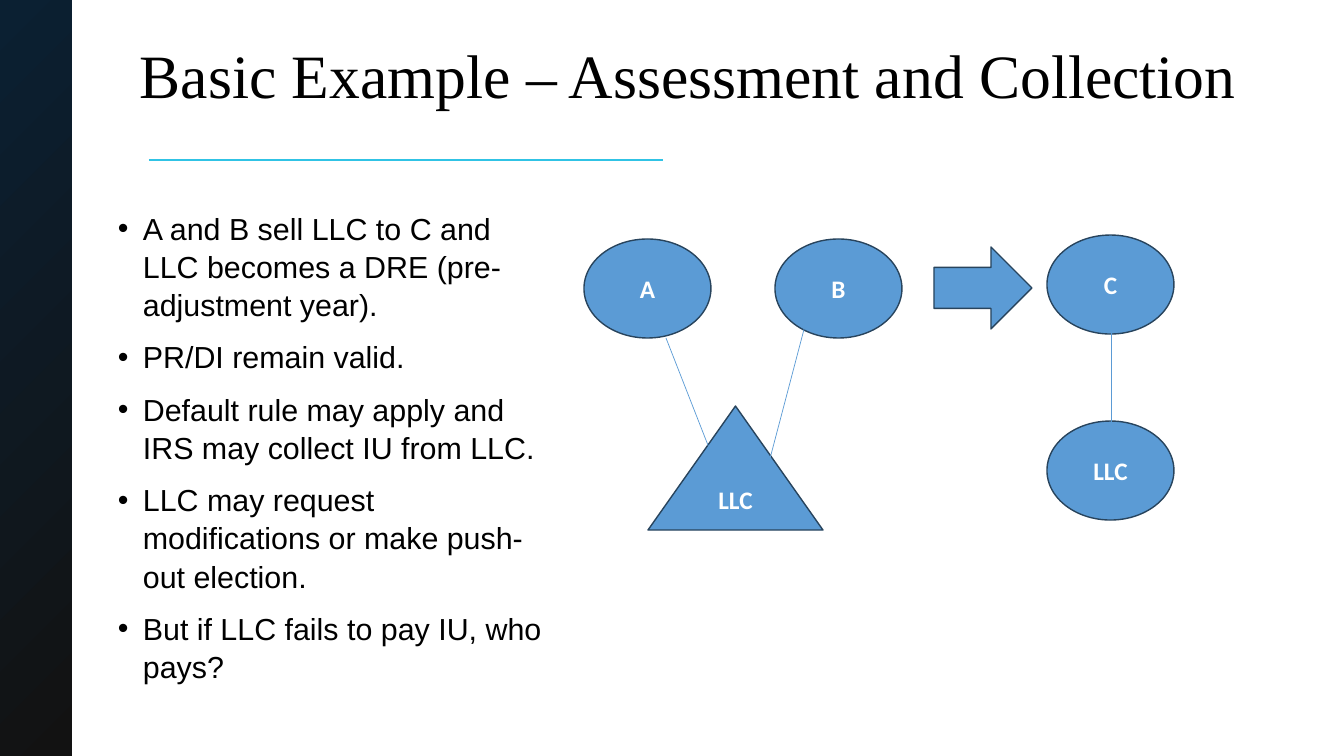
from lxml.etree import SubElement
from pptx import Presentation
from pptx.dml.color import RGBColor
from pptx.enum.shapes import MSO_CONNECTOR, MSO_SHAPE
from pptx.enum.text import MSO_ANCHOR, PP_ALIGN
from pptx.oxml.ns import qn
from pptx.util import Pt

EMU_PER_PX = 914400 / 100.8
BLUE, OUTLINE, RULE = "5B9BD5", "28445D", "30C3E5"
BLACK, WHITE = "000000", "FFFFFF"
OVAL_SIZE = (127, 99)
POINTS = [
    "A and B sell LLC to C and LLC becomes a DRE (pre-adjustment year).",
    "PR/DI remain valid.",
    "Default rule may apply and IRS may collect IU from LLC.",
    "LLC may request modifications or make push-out election.",
    "But if LLC fails to pay IU, who pays?",
]


def px(*lengths):
    return [round(length * EMU_PER_PX) for length in lengths]


def color(hex_string):
    return RGBColor.from_string(hex_string)


def set_font(para, name, size, hex_string, bold=False):
    font = para.font
    font.name, font.size, font.bold = name, Pt(size), bold
    font.color.rgb = color(hex_string)


def add_bullet(para, indent):
    """Give the paragraph a round bullet with a hanging indent in px."""
    properties = para._p.get_or_add_pPr()
    hang = px(indent)[0]
    properties.set("marL", str(hang))
    properties.set("indent", str(-hang))
    SubElement(properties, qn("a:buFont"), typeface="Arial")
    SubElement(properties, qn("a:buChar"), char="•")


class SlideBuilder:
    def __init__(self, slide):
        self.shapes = slide.shapes

    def sidebar(self, frame, start, end):
        bar = self.shapes.add_shape(MSO_SHAPE.RECTANGLE, *px(*frame))
        bar.shadow.inherit = False
        bar.line.fill.background()
        bar.fill.gradient()
        bar.fill.gradient_angle = 315
        for stop, hex_string in zip(bar.fill.gradient_stops, (start, end)):
            stop.color.rgb = color(hex_string)

    def line(self, start, end, hex_string=BLUE, width=0.5):
        connector = self.shapes.add_connector(
            MSO_CONNECTOR.STRAIGHT, *px(*start, *end))
        connector.line.color.rgb = color(hex_string)
        connector.line.width = Pt(width)
        SubElement(connector._element.spPr, qn("a:effectLst"))

    def text_frame(self, frame):
        text = self.shapes.add_textbox(*px(*frame)).text_frame
        text.word_wrap = True
        return text

    def title(self, frame, wording):
        para = self.text_frame(frame).paragraphs[0]
        para.text = wording
        para.line_spacing = 0.9
        set_font(para, "Times New Roman", 44, BLACK)

    def bullets(self, frame, wordings):
        text = self.text_frame(frame)
        for index, wording in enumerate(wordings):
            para = text.add_paragraph() if index else text.paragraphs[0]
            para.text = wording
            para.line_spacing = 1.05
            para.space_before = Pt(10 if index else 0)
            add_bullet(para, 25)
            set_font(para, "Arial", 21.7, BLACK)

    def node(self, preset, frame, label=""):
        shape = self.shapes.add_shape(preset, *px(*frame))
        shape.shadow.inherit = False
        shape.fill.solid()
        shape.fill.fore_color.rgb = color(BLUE)
        shape.line.color.rgb = color(OUTLINE)
        shape.line.width = Pt(1)
        if label:
            shape.text_frame.vertical_anchor = MSO_ANCHOR.MIDDLE
            para = shape.text_frame.paragraphs[0]
            para.text = label
            para.alignment = PP_ALIGN.CENTER
            set_font(para, "Calibri", 18, WHITE, bold=True)


def main():
    deck = Presentation()
    deck.slide_width, deck.slide_height = px(1344, 756)
    page = SlideBuilder(deck.slides.add_slide(deck.slide_layouts[6]))

    page.sidebar((0, 0, 72, 756), "0B2032", "121212")
    page.line((149, 160), (663, 160), RULE, 1.5)
    page.title((130, 40, 1159, 146), "Basic Example – Assessment and Collection")
    page.bullets((108, 203, 446, 480), POINTS)

    page.node(MSO_SHAPE.ISOSCELES_TRIANGLE, (648, 406, 175, 124), "LLC")
    for label, left, top in [("A", 584, 239), ("B", 775, 239),
                             ("C", 1047, 235), ("LLC", 1047, 421)]:
        page.node(MSO_SHAPE.OVAL, (left, top, *OVAL_SIZE), label)
    page.node(MSO_SHAPE.RIGHT_ARROW, (934, 247, 98, 82))

    for start, end in [((666, 338), (724, 486)), ((806, 322), (767, 470)),
                       ((1111, 316), (1111, 468))]:
        page.line(start, end)

    deck.save("out.pptx")


if __name__ == "__main__":
    main()
